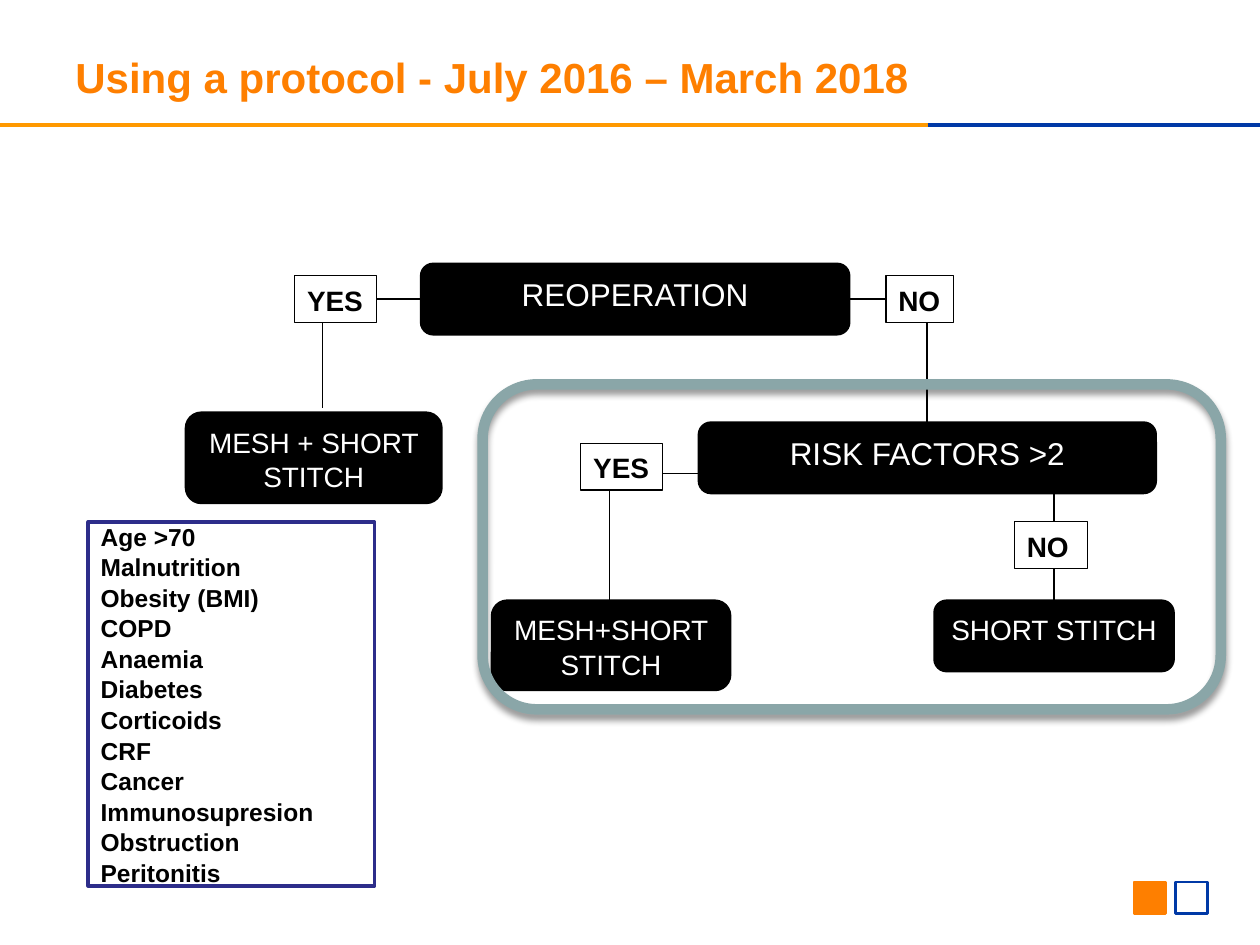
from dataclasses import dataclass

import lxml.etree
import pptx
import pptx.dml.color
import pptx.enum.shapes
import pptx.enum.text
import pptx.oxml.ns
import pptx.util

Cm, Pt = pptx.util.Cm, pptx.util.Pt
SHAPE = pptx.enum.shapes.MSO_SHAPE
CONNECTOR = pptx.enum.shapes.MSO_CONNECTOR
ALIGN = pptx.enum.text.PP_ALIGN
ANCHOR = pptx.enum.text.MSO_ANCHOR
qn = pptx.oxml.ns.qn


@dataclass(frozen=True)
class Theme:
    font: str = "Arial"
    orange: str = "FE7F00"
    rule_orange: str = "FF9900"
    blue: str = "0039A6"
    navy: str = "2D2D8A"
    teal: str = "8AA6A8"
    black: str = "000000"
    white: str = "FFFFFF"
    title_size: int = 24
    question_size: int = 18
    body_size: int = 16
    list_size: int = 14
    line_spacing: float = 1.04


@dataclass(frozen=True)
class Box:
    """A rectangle in centimetres."""
    left: float
    top: float
    width: float
    height: float

    def inner(self, left, top, width, height):
        return Box(self.left + left, self.top + top, width, height)

    def point(self, x, y):
        return Cm(self.left + x), Cm(self.top + y)

    def emu(self):
        return [Cm(v) for v in (self.left, self.top, self.width, self.height)]


THEME = Theme()
RISK_FACTORS = ["Age >70", "Malnutrition", "Obesity (BMI)", "COPD", "Anaemia", "Diabetes",
                "Corticoids", "CRF", "Cancer", "Immunosupresion", "Obstruction", "Peritonitis"]


def rgb(color):
    return pptx.dml.color.RGBColor.from_string(color)


def write(frame, lines, size, color, bold=False, align=ALIGN.LEFT, spacing=THEME.line_spacing):
    for index, line in enumerate(lines):
        paragraph = frame.paragraphs[0] if index == 0 else frame.add_paragraph()
        paragraph.text = line
        paragraph.alignment = align
        paragraph.line_spacing = spacing
        paragraph.font.name = THEME.font
        paragraph.font.size = Pt(size)
        paragraph.font.bold = bold
        paragraph.font.color.rgb = rgb(color)


def add_block(slide, box, preset, fill, line, width):
    block = slide.shapes.add_shape(preset, *box.emu())
    block.shadow.inherit = False
    if fill:
        block.fill.solid()
        block.fill.fore_color.rgb = rgb(fill)
    else:
        block.fill.background()
    block.line.color.rgb = rgb(line)
    block.line.width = Pt(width)
    return block


def add_step(slide, box, text, size=THEME.body_size):
    step = add_block(slide, box, SHAPE.ROUNDED_RECTANGLE, THEME.black, THEME.black, 2)
    step.text_frame.word_wrap = True
    step.text_frame.vertical_anchor = ANCHOR.TOP
    write(step.text_frame, [text], size, THEME.white, align=ALIGN.CENTER)
    return step


def add_answer(slide, box, text):
    answer = add_block(slide, box, SHAPE.RECTANGLE, THEME.white, THEME.black, 0.75)
    answer.text_frame.word_wrap = False
    answer.text_frame.vertical_anchor = ANCHOR.TOP
    write(answer.text_frame, [text], THEME.body_size, THEME.black, bold=True)


def add_line(slide, start, end, color=THEME.black, width=0.75, kind=CONNECTOR.STRAIGHT):
    line = slide.shapes.add_connector(kind, *start, *end)
    line.line.color.rgb = rgb(color)
    line.line.width = Pt(width)
    properties = line._element.spPr
    lxml.etree.SubElement(properties, qn("a:effectLst"))
    if kind == CONNECTOR.ELBOW:
        # One corner: across first, then down
        properties.find(qn("a:prstGeom")).set("prst", "bentConnector2")
    return line


def add_elbow(slide, start, end):
    return add_line(slide, start, end, kind=CONNECTOR.ELBOW)


def add_drop_shadow(shape):
    effects = shape._element.spPr.find(qn("a:effectLst"))
    shadow = lxml.etree.SubElement(effects, qn("a:outerShdw"), blurRad=str(Pt(4)),
                                   dist=str(Pt(3)), dir="5400000", rotWithShape="0")
    color = lxml.etree.SubElement(shadow, qn("a:srgbClr"), val=THEME.black)
    lxml.etree.SubElement(color, qn("a:alpha"), val="40000")


def header(slide, box):
    title_box = box.inner(1.27, 0.76, 22.86, 1.57)
    title = slide.shapes.add_textbox(*title_box.emu()).text_frame
    title.word_wrap = True
    title.vertical_anchor = ANCHOR.MIDDLE
    write(title, ["Using a protocol - July 2016 – March 2018"], THEME.title_size,
          THEME.orange, bold=True, spacing=1.0)
    split = box.point(18.7, box.height)
    add_line(slide, box.point(0, box.height), split, THEME.rule_orange, 2.25)
    add_line(slide, split, box.point(box.width, box.height), THEME.blue, 2)


def corner_squares(slide, box):
    side = box.height
    for left, fill, line in ((0, THEME.orange, THEME.orange),
                             (box.width - side, None, THEME.blue)):
        add_block(slide, box.inner(left, 0, side, side), SHAPE.RECTANGLE, fill, line, 1.5)


def reoperation_branch(slide, box):
    add_step(slide, box.inner(4.74, 0, 8.61, 1.4), "REOPERATION", THEME.question_size)
    add_step(slide, box.inner(0, 3, 5.13, 1.8), "MESH + SHORT STITCH")
    add_elbow(slide, box.point(4.74, 0.7), box.point(2.74, 2.9))
    add_elbow(slide, box.point(13.35, 0.7), box.point(14.93, 3.2))
    add_answer(slide, box.inner(2.18, 0.23, 1.65, 0.94), "YES")
    add_answer(slide, box.inner(14.1, 0.23, 1.37, 0.94), "NO")


def risk_branch(slide, box):
    add_step(slide, box.inner(4.37, 0.78, 9.19, 1.4), "RISK FACTORS >2", THEME.question_size)
    add_elbow(slide, box.point(4.37, 1.8), box.point(2.56, 4.37))
    add_answer(slide, box.inner(1.98, 1.19, 1.65, 0.94), "YES")
    add_step(slide, box.inner(0.2, 4.37, 4.78, 1.78), "MESH+SHORT STITCH")
    short_stitch = add_step(slide, box.inner(9.12, 4.37, 4.8, 1.4), "SHORT STITCH")
    descent = add_line(slide, box.point(11.52, 2.18), box.point(11.52, 4.37))
    descent.end_connect(short_stitch, 0)
    # Frame around the whole branch
    frame = add_block(slide, box, SHAPE.ROUNDED_RECTANGLE, None, THEME.teal, 6)
    add_drop_shadow(frame)
    add_answer(slide, box.inner(10.72, 2.77, 1.47, 0.94), "NO")


def risk_factor_list(slide, box):
    panel = add_block(slide, box, SHAPE.RECTANGLE, THEME.white, THEME.navy, 2)
    panel.text_frame.word_wrap = False
    panel.text_frame.vertical_anchor = ANCHOR.MIDDLE
    write(panel.text_frame, RISK_FACTORS, THEME.list_size, THEME.black, bold=True)


def main():
    presentation = pptx.Presentation()
    presentation.slide_width, presentation.slide_height = Cm(25.4), Cm(19.05)
    slide = presentation.slides.add_slide(presentation.slide_layouts[6])
    header(slide, Box(0, 0, 25.4, 2.52))
    corner_squares(slide, Box(22.86, 17.78, 1.48, 0.64))
    reoperation_branch(slide, Box(3.76, 5.33, 15.47, 4.8))
    risk_factor_list(slide, Box(1.78, 10.52, 5.77, 7.34))
    risk_branch(slide, Box(9.73, 7.75, 14.88, 6.55))
    presentation.save("out.pptx")


if __name__ == "__main__":
    main()
